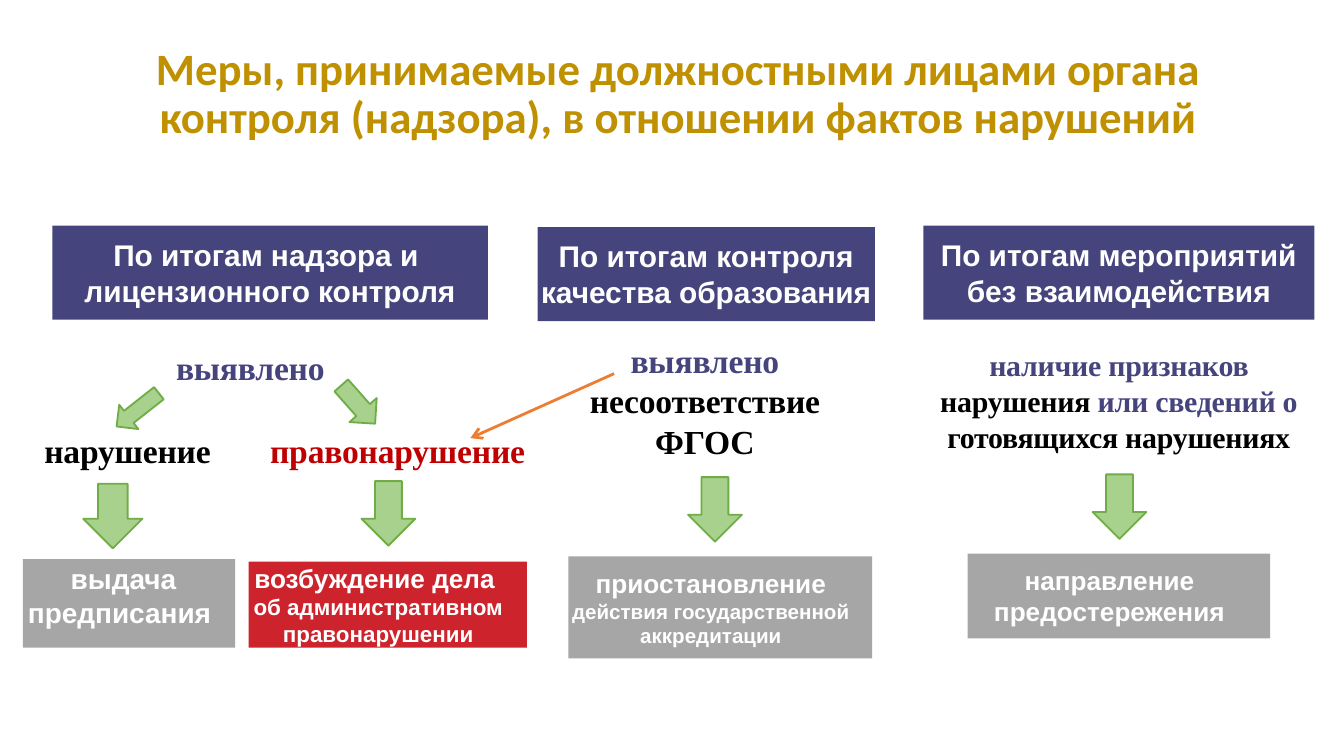
import pptx
import pptx.util
from dataclasses import dataclass
from lxml import etree
from pptx.dml.color import RGBColor
from pptx.enum.shapes import MSO_CONNECTOR, MSO_SHAPE
from pptx.enum.text import MSO_ANCHOR, MSO_AUTO_SIZE, PP_ALIGN
from pptx.oxml.ns import qn
from pptx.util import Inches, Pt


@dataclass(frozen=True)
class Theme:
    gold: str = "BF9000"
    indigo: str = "46447D"
    header_text: str = "FEFEFE"
    white: str = "FFFFFF"
    black: str = "000000"
    gray: str = "A6A6A6"
    red: str = "CD232D"
    dark_red: str = "C00000"
    green: str = "A9D18E"
    green_edge: str = "70AD47"
    orange: str = "ED7D31"
    title_font: str = "Calibri"
    box_font: str = "Arial"
    finding_font: str = "Times New Roman"
    title: int = 24
    finding: int = 18
    header: int = 16
    order: int = 15
    outcome: int = 14
    detail: int = 12
    small: int = 11


T = Theme()


def rgb(value):
    return RGBColor.from_string(value)


def set_font(font, name, size, color=None):
    font.name, font.size, font.bold = name, Pt(size), True
    if color:
        font.color.rgb = rgb(color)


def set_frame(tf, insets, anchor=MSO_ANCHOR.TOP):
    tf.word_wrap = True
    tf.auto_size = MSO_AUTO_SIZE.NONE
    tf.vertical_anchor = anchor
    (tf.margin_left, tf.margin_top,
     tf.margin_right, tf.margin_bottom) = map(Inches, insets)


def set_margin(p, side, inches):
    p._p.get_or_add_pPr().set(side, str(Inches(inches)))


def add_title(s, text):
    sp = s.shapes.title
    sp.left, sp.top, sp.width, sp.height = map(Inches, (0.75, 0.35, 8.59, 0.71))
    set_frame(sp.text_frame, (0.1, 0.05, 0.1, 0.05), MSO_ANCHOR.MIDDLE)
    p = sp.text_frame.paragraphs[0]
    p.text = text
    p.alignment = PP_ALIGN.CENTER
    p.line_spacing = 0.9
    set_font(p.font, T.title_font, T.title, T.gold)


def add_box(s, at, fill, color, lines, insets, anchor=MSO_ANCHOR.TOP):
    """Filled rectangle; lines holds (text, size) for each paragraph."""
    sp = s.shapes.add_shape(MSO_SHAPE.RECTANGLE, *map(Inches, at))
    sp.shadow.inherit = False
    sp.fill.solid()
    sp.fill.fore_color.rgb = rgb(fill)
    sp.line.fill.background()
    tf = sp.text_frame
    set_frame(tf, insets, anchor)
    for i, (text, size) in enumerate(lines):
        p = tf.add_paragraph() if i else tf.paragraphs[0]
        p.text = text
        p.alignment = PP_ALIGN.CENTER
        set_font(p.font, T.box_font, size, color)


def add_header(s, at, *lines):
    add_box(s, at, T.indigo, T.header_text,
            [(line, T.header) for line in lines], (0, 0.08, 0, 0.08))


def add_outcome(s, at, lines, fill=T.gray, pad=0.08, anchor=MSO_ANCHOR.TOP):
    add_box(s, at, fill, T.white, lines, (0, pad, 0.14, pad), anchor)


def add_text_box(s, at, insets=(0.1, 0.05, 0.1, 0.05)):
    tf = s.shapes.add_textbox(*map(Inches, at)).text_frame
    set_frame(tf, insets)
    return tf


def fill_finding(p, runs, size, align=PP_ALIGN.CENTER):
    """Runs of (text, colour) in the slightly condensed serif face."""
    p.alignment = align
    set_font(p.font, T.finding_font, size)
    for text, color in runs:
        r = p.add_run()
        r.text = text
        r.font.color.rgb = rgb(color)
        r._r.get_or_add_rPr().set("spc", "-10")


def add_split_finding(s):
    """Finding that branches into two kinds, set apart by a tab stop."""
    tf = add_text_box(s, (0.32, 2.58, 4.25, 0.94), (0.01, 0, 0, 0))
    p = tf.paragraphs[0]
    set_margin(p, "marL", 0.98)
    fill_finding(p, [("выявлено", T.indigo)], T.finding, PP_ALIGN.LEFT)

    p = tf.add_paragraph()
    p.space_before = Pt(23)
    tabs = etree.SubElement(p._p.get_or_add_pPr(), qn("a:tabLst"))
    etree.SubElement(tabs, qn("a:tab"), pos=str(Inches(1.68)), algn="l")
    fill_finding(p, [("нарушение\t", T.black), ("правонарушение", T.dark_red)],
                 T.finding, PP_ALIGN.LEFT)


def add_quality_finding(s):
    tf = add_text_box(s, (4.22, 2.48, 2.18, 1.01))
    p = tf.paragraphs[0]
    set_margin(p, "marR", 0.13)
    fill_finding(p, [("выявлено", T.indigo)], T.finding)
    fill_finding(tf.add_paragraph(), [("несоответствие ФГОС", T.black)], T.finding)


def add_signs_finding(s):
    tf = add_text_box(s, (6.87, 2.53, 2.91, 0.91))
    fill_finding(tf.paragraphs[0], [
        ("наличие признаков ", T.indigo), ("нарушения ", T.black),
        ("или сведений о ", T.indigo), ("готовящихся нарушениях", T.black),
    ], T.header)


def add_arrow(s, at, rotation=0):
    sp = s.shapes.add_shape(MSO_SHAPE.DOWN_ARROW, *map(Inches, at))
    sp.shadow.inherit = False
    sp.rotation = rotation
    sp.fill.solid()
    sp.fill.fore_color.rgb = rgb(T.green)
    sp.line.color.rgb = rgb(T.green_edge)
    sp.line.width = Pt(1)


def add_link(s, *ends):
    c = s.shapes.add_connector(MSO_CONNECTOR.STRAIGHT, *map(Inches, ends))
    c.line.color.rgb = rgb(T.orange)
    c.line.width = Pt(1.5)
    etree.SubElement(c.line._get_or_add_ln(), qn("a:tailEnd"), type="arrow")
    etree.SubElement(c._element.spPr, qn("a:effectLst"))


def main():
    prs = pptx.Presentation()
    # Widescreen 16:9
    prs.slide_width = Inches(10)
    prs.slide_height = Inches(10 * 9 / 16)
    s = prs.slides.add_slide(prs.slide_layouts[5])
    add_title(s, "Меры, принимаемые должностными лицами органа "
                 "контроля (надзора), в отношении фактов нарушений")

    # Column headers
    add_header(s, (0.39, 1.68, 3.24, 0.7),
               "По итогам надзора и ", "лицензионного контроля")
    add_header(s, (4, 1.69, 2.51, 0.7), "По итогам контроля качества образования")
    add_header(s, (6.87, 1.68, 2.91, 0.7), "По итогам мероприятий без взаимодействия")

    # Findings
    add_split_finding(s)
    add_quality_finding(s)
    add_signs_finding(s)

    # Arrows: two branches, then one down to each outcome
    add_arrow(s, (0.91, 2.85, 0.23, 0.4), 51.8)
    add_arrow(s, (2.53, 2.82, 0.27, 0.38), 318.5)
    add_arrow(s, (0.62, 3.6, 0.44, 0.48))
    for left, top in ((2.69, 3.58), (5.12, 3.55), (8.13, 3.53)):
        add_arrow(s, (left, top, 0.4, 0.48))

    # Outcomes
    add_outcome(s, (0.17, 4.16, 1.58, 0.66),
                [(" выдача предписания", T.order)], pad=0.02)
    add_outcome(s, (1.85, 4.18, 2.07, 0.64),
                [("возбуждение дела ", T.outcome),
                 ("об административном правонарушении", T.detail)],
                fill=T.red, pad=0, anchor=MSO_ANCHOR.MIDDLE)
    add_outcome(s, (4.23, 4.14, 2.26, 0.76),
                [("приостановление", T.outcome),
                 ("действия государственной аккредитации", T.small)])
    add_outcome(s, (7.2, 4.12, 2.25, 0.63),
                [("направление предостережения", T.outcome)])

    # Link from the quality finding to the offence
    add_link(s, 4.57, 2.78, 3.5, 3.26)
    prs.save("out.pptx")


if __name__ == "__main__":
    main()
